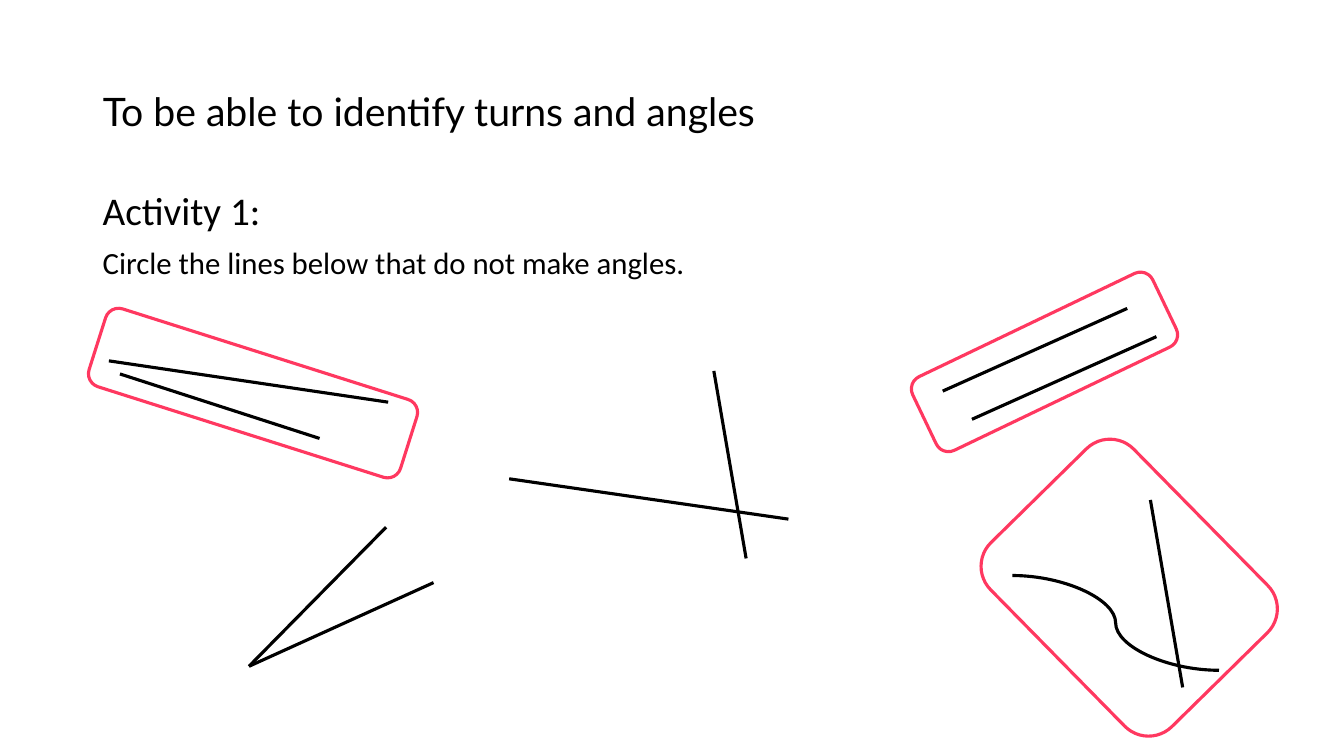
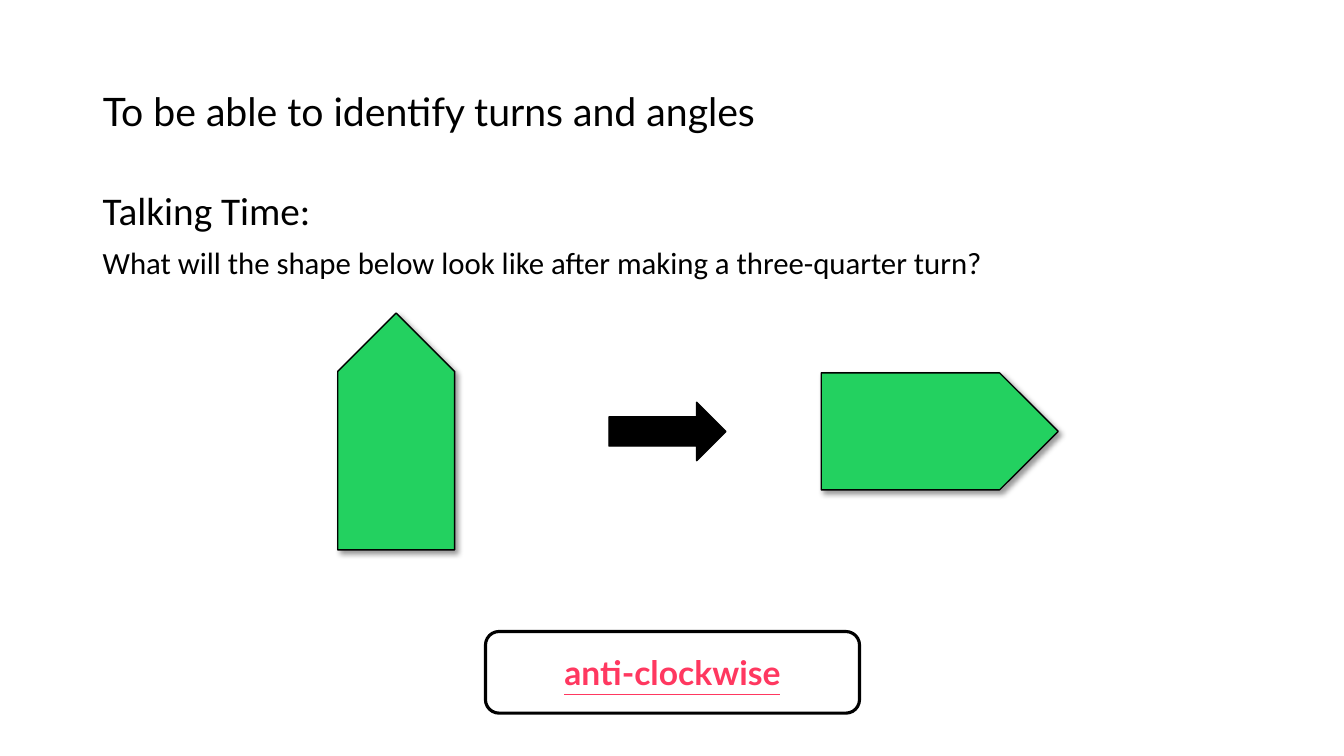
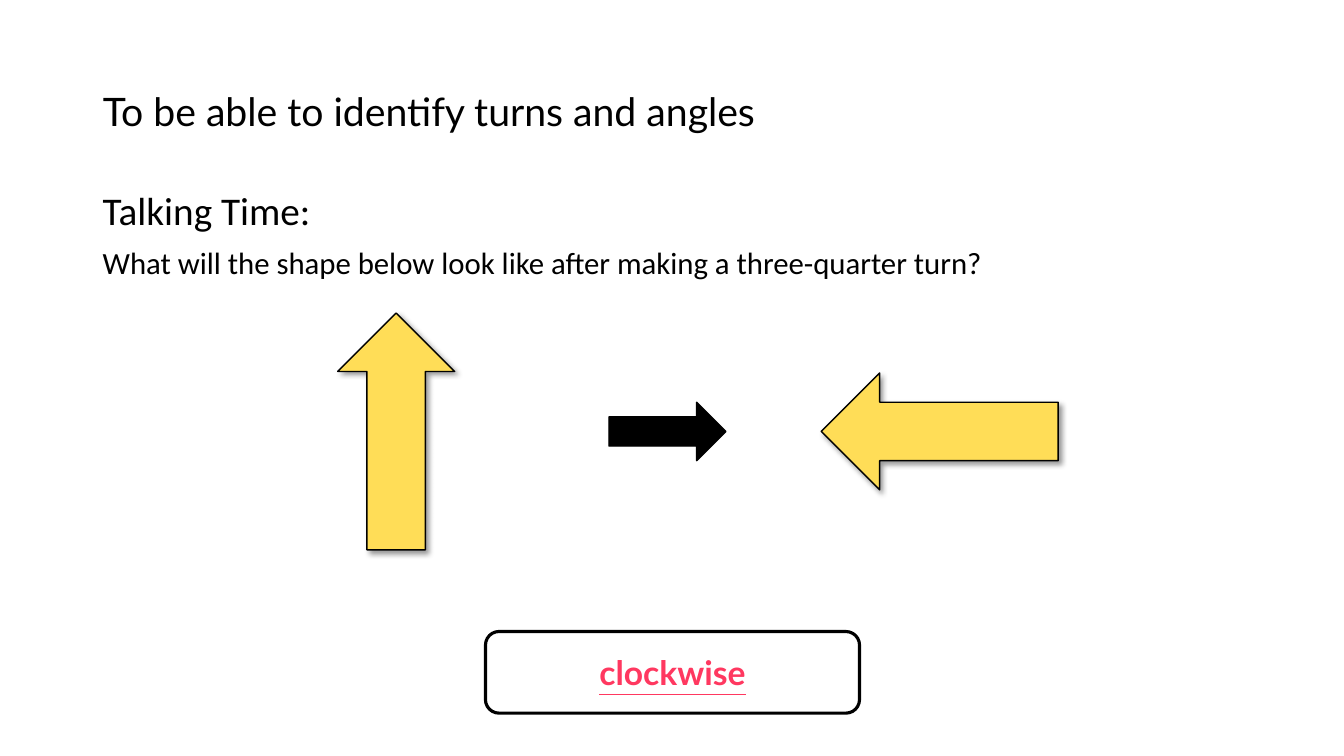
import pptx
import pptx.util
import pptx.dml.color
import pptx.enum.shapes
import pptx.enum.text
from lxml import etree

Inches, Pt = pptx.util.Inches, pptx.util.Pt
SHAPE = pptx.enum.shapes.MSO_SHAPE
CONNECTOR = pptx.enum.shapes.MSO_CONNECTOR
ALIGN = pptx.enum.text.PP_ALIGN
ANCHOR = pptx.enum.text.MSO_ANCHOR
A = "http://schemas.openxmlformats.org/drawingml/2006/main"

# Shared style
BLACK, WHITE, PINK, GREEN, YELLOW = "000000", "FFFFFF", "FF3860", "23D160", "FFDD57"
HEAD_FONT, BODY_FONT = "Lato", "Calibri"
THICK, THIN = 2.25, 1
TITLE = "To be able to identify turns and angles"
TURN_QUESTION = "What will the shape below look like after making a three-quarter turn?"

# Turn slides: centres of the start shape, arrow and answer, on one row
START_X, ARROW_X, END_X, ROW_Y = 3.93, 6.62, 9.32, 4.28


def color(value):
    return pptx.dml.color.RGBColor.from_string(value)


def set_font(p, name, size, value=BLACK):
    p.font.name, p.font.size = name, Pt(size)
    p.font.color.rgb = color(value)


def add_slide(prs, heading, task):
    """Slide with the shared title, a heading and a task below it."""
    s = prs.slides.add_slide(prs.slide_layouts[5])
    title = s.shapes.title
    title.left, title.top = Inches(0.92), Inches(0.4)
    title.width, title.height = Inches(9.6), Inches(1.45)
    tf = title.text_frame
    tf.text = TITLE
    tf.vertical_anchor = ANCHOR.MIDDLE
    p = tf.paragraphs[0]
    p.alignment, p.line_spacing = ALIGN.LEFT, 0.9
    set_font(p, HEAD_FONT, 28)

    tf = s.shapes.add_textbox(Inches(0.92), Inches(1.85), Inches(11.5), Inches(1.1)).text_frame
    tf.word_wrap = True
    tf.text = f"{heading}\n{task}"
    for p, size in zip(tf.paragraphs, (28, 22)):
        p.line_spacing = 0.9
        set_font(p, BODY_FONT, size)
    tf.paragraphs[1].space_before = Pt(10)
    return s


def add_line(s, x1, y1, x2, y2, kind=CONNECTOR.STRAIGHT):
    line = s.shapes.add_connector(kind, Inches(x1), Inches(y1), Inches(x2), Inches(y2))
    line.line.color.rgb = color(BLACK)
    line.line.width = Pt(THICK)
    etree.SubElement(line._element.spPr, f"{{{A}}}effectLst")


def add_shape(s, kind, x, y, w, h, fill=None, line=BLACK, width=THIN, rotation=0):
    """Preset shape centred on x, y."""
    sp = s.shapes.add_shape(kind, Inches(x - w / 2), Inches(y - h / 2), Inches(w), Inches(h))
    sp.rotation = rotation
    if fill:
        sp.fill.solid()
        sp.fill.fore_color.rgb = color(fill)
    else:
        sp.fill.background()
    sp.line.color.rgb = color(line)
    sp.line.width = Pt(width)
    sp.shadow.inherit = False
    return sp


def add_shadow(sp):
    effects = sp._element.spPr.find(f"{{{A}}}effectLst")
    shadow = etree.SubElement(effects, f"{{{A}}}outerShdw", blurRad=str(Pt(4)), dist=str(Pt(3)),
                              dir="2700000", algn="tl", rotWithShape="0")
    tint = etree.SubElement(shadow, f"{{{A}}}srgbClr", val=BLACK)
    etree.SubElement(tint, f"{{{A}}}alpha", val="40000")


def add_turn_slide(prs, kind, w, h, fill, rotations, answer):
    """A shape before and after its turn, with the direction as answer."""
    s = add_slide(prs, "Talking Time:", TURN_QUESTION)
    add_shape(s, SHAPE.RIGHT_ARROW, ARROW_X, ROW_Y, 1.16, 0.58, BLACK)
    for x, rotation in zip((START_X, END_X), rotations):
        add_shadow(add_shape(s, kind, x, ROW_Y, w, h, fill, rotation=rotation))
    box = add_shape(s, SHAPE.ROUNDED_RECTANGLE, 6.67, 6.67, 3.71, 0.81, WHITE, width=THICK)
    tf = box.text_frame
    tf.text = answer
    tf.vertical_anchor = ANCHOR.MIDDLE
    p = tf.paragraphs[0]
    p.alignment = ALIGN.CENTER
    set_font(p, HEAD_FONT, 24, PINK)
    p.font.bold = p.font.underline = True


def add_circle_slide(prs):
    s = add_slide(prs, "Activity 1:", "Circle the lines below that do not make angles.")
    # Pairs of lines
    for ends in (
        (2.47, 6.61, 3.83, 5.23), (2.47, 6.61, 4.3, 5.78),
        (9.35, 3.88, 11.18, 3.06), (9.64, 4.16, 11.47, 3.34),
        (5.05, 4.75, 7.82, 5.15), (7.08, 3.68, 7.4, 5.54),
        (1.08, 3.58, 3.85, 3.99), (1.19, 3.71, 3.17, 4.35),
        (11.41, 4.96, 11.73, 6.82),
    ):
        add_line(s, *ends)
    add_line(s, 10.04, 5.71, 12.09, 6.65, CONNECTOR.CURVE)
    # Rings round the pairs without an angle
    for x, y, w, h, rotation in (
        (10.36, 3.59, 2.64, 0.81, 334.4),
        (11.2, 5.83, 1.99, 2.56, 315.5),
        (2.51, 3.9, 3.24, 0.81, 17.6),
    ):
        add_shape(s, SHAPE.ROUNDED_RECTANGLE, x, y, w, h, line=PINK, width=THICK, rotation=rotation)


def main():
    prs = pptx.Presentation()
    prs.slide_width, prs.slide_height = Inches(13.33), Inches(7.5)
    add_circle_slide(prs)
    add_turn_slide(prs, SHAPE.PENTAGON, 2.35, 1.16, GREEN, (270, 0), "anti-clockwise")
    add_turn_slide(prs, SHAPE.UP_ARROW, 1.16, 2.35, YELLOW, (0, 270), "clockwise")
    prs.save("out.pptx")


if __name__ == "__main__":
    main()
